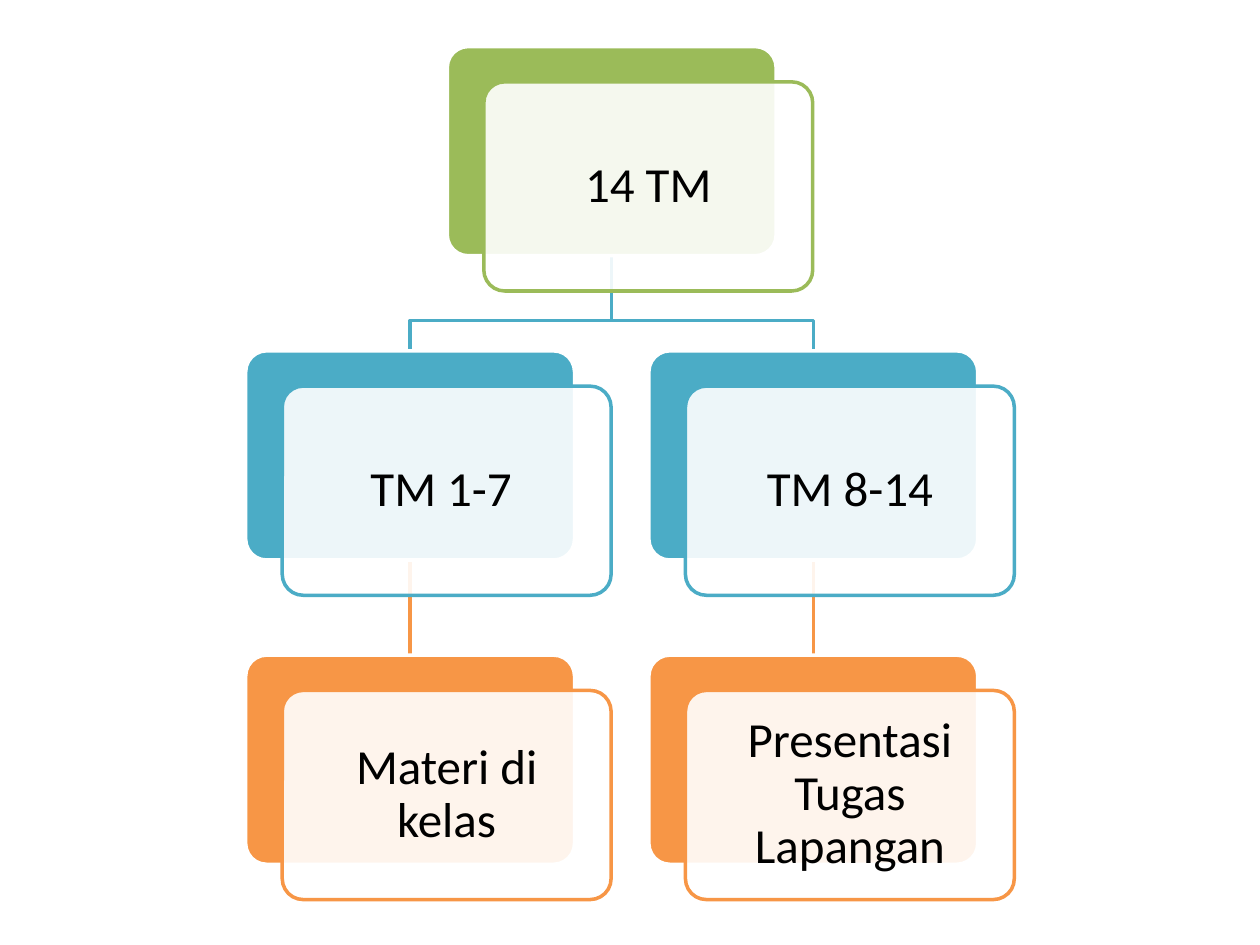
from lxml import etree
from pptx import Presentation
from pptx.dml.color import RGBColor
from pptx.enum.shapes import MSO_CONNECTOR, MSO_SHAPE
from pptx.enum.text import MSO_ANCHOR, PP_ALIGN
from pptx.oxml.ns import qn
from pptx.util import Inches, Pt

ROUNDED = MSO_SHAPE.ROUNDED_RECTANGLE
STRAIGHT = MSO_CONNECTOR.STRAIGHT
MIDDLE = MSO_ANCHOR.MIDDLE
CENTER = PP_ALIGN.CENTER
BOTTOM_SIDE, TOP_SIDE = 2, 0

GREEN = RGBColor(0x9B, 0xBB, 0x59)
TEAL = RGBColor(0x4B, 0xAC, 0xC6)
ORANGE = RGBColor(0xF7, 0x96, 0x46)
WHITE = RGBColor(0xFF, 0xFF, 0xFF)
BLACK = RGBColor(0, 0, 0)

# Content: name -> (text, column, level, parent)
NODES = {
    "root": ("14 TM", 0.5, 0, None),
    "first half": ("TM 1-7 ", 0, 1, "root"),
    "lessons": ("Materi di kelas", 0, 2, "first half"),
    "second half": ("TM 8-14", 1, 1, "root"),
    "field work": ("Presentasi Tugas Lapangan", 1, 2, "second half"),
}
LEVEL_COLORS = [GREEN, TEAL, ORANGE]

# Layout in inches
LEFT, TOP = 1.95, 0.37
COLUMN_STEP, LEVEL_STEP = 3.2, 2.415
CARD_WIDTH, CARD_HEIGHT = 2.61, 1.66
OFFSET_X, OFFSET_Y = 0.29, 0.28
BEND_ABOVE_CHILD = 0.24


def corner(name):
    _, column, level, _ = NODES[name]
    return LEFT + column * COLUMN_STEP, TOP + level * LEVEL_STEP


def style_line(shape, color):
    shape.line.color.rgb = color
    shape.line.width = Pt(2)


def add_link(parent, child):
    """Draw a straight link, or a bent one when the columns differ."""
    (parent_x, parent_y), (child_x, child_y) = corner(parent), corner(child)
    start = Inches(parent_x + CARD_WIDTH / 2), Inches(parent_y + CARD_HEIGHT)
    end = Inches(child_x + CARD_WIDTH / 2), Inches(child_y)
    if start[0] == end[0]:
        link = slide.shapes.add_connector(STRAIGHT, *start, *end)
        etree.SubElement(link._element.spPr, qn("a:effectLst"))
        straight_links.append((link, parent, child))
    else:
        bend = Inches(child_y - BEND_ABOVE_CHILD)
        builder = slide.shapes.build_freeform(*start)
        builder.add_line_segments([(start[0], bend), (end[0], bend), end], close=False)
        link = builder.convert_to_shape()
        link.fill.background()
        link.shadow.inherit = False
    style_line(link, LEVEL_COLORS[NODES[child][2]])


def add_card(x, y, fill, line):
    card = slide.shapes.add_shape(
        ROUNDED, Inches(x), Inches(y), Inches(CARD_WIDTH), Inches(CARD_HEIGHT))
    card.adjustments[0] = 0.1
    card.shadow.inherit = False
    card.fill.solid()
    card.fill.fore_color.rgb = fill
    style_line(card, line)
    return card


def add_node(name):
    text, _, level, _ = NODES[name]
    color = LEVEL_COLORS[level]
    x, y = corner(name)
    back_cards[name] = add_card(x, y, color, WHITE)

    # Translucent front card with the label
    front = add_card(x + OFFSET_X, y + OFFSET_Y, WHITE, color)
    white = front._element.spPr.find(qn("a:solidFill")).find(qn("a:srgbClr"))
    etree.SubElement(white, qn("a:alpha"), val="90000")
    frame = front.text_frame
    frame.word_wrap = True
    frame.vertical_anchor = MIDDLE
    frame.margin_left = frame.margin_right = Inches(0.12)
    frame.margin_top = frame.margin_bottom = Inches(0.12)
    para = frame.paragraphs[0]
    para.alignment = CENTER
    para.line_spacing = 0.9
    span = para.add_run()
    span.text = text
    span.font.name = "Calibri"
    span.font.size = Pt(28)
    span.font.color.rgb = BLACK


deck = Presentation()
deck.slide_width, deck.slide_height = Inches(10), Inches(7.5)
slide = deck.slides.add_slide(deck.slide_layouts[6])
straight_links, back_cards = [], {}

# Links lie behind the cards
for name in reversed(NODES):
    if NODES[name][3]:
        add_link(NODES[name][3], name)
for name in NODES:
    add_node(name)

# Join the straight links to the cards
for link, parent, child in straight_links:
    link.begin_connect(back_cards[parent], BOTTOM_SIDE)
    link.end_connect(back_cards[child], TOP_SIDE)

deck.save("out.pptx")
